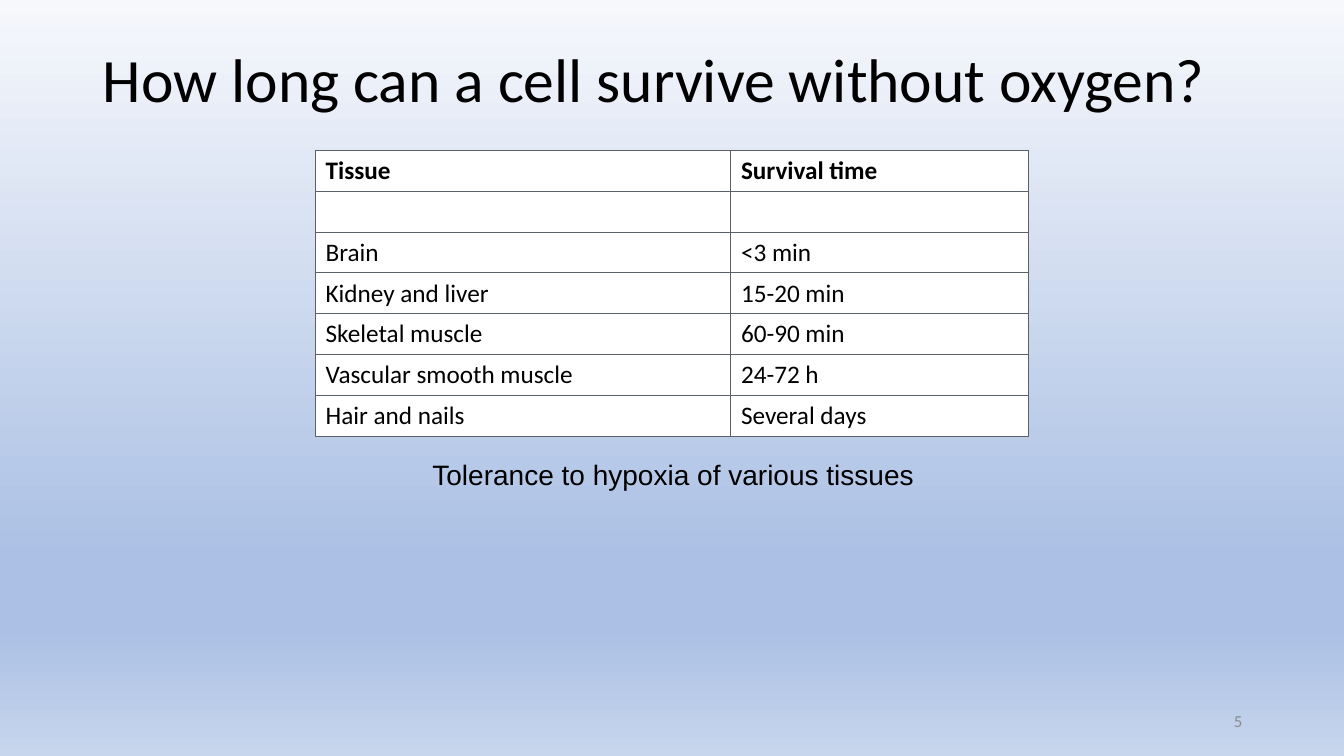
from dataclasses import dataclass

from lxml.etree import SubElement
from pptx import Presentation
from pptx.dml.color import RGBColor
from pptx.enum.text import MSO_ANCHOR as Anchor, MSO_AUTO_SIZE as AutoSize, PP_ALIGN as Align
from pptx.oxml.ns import qn
from pptx.slide import Slide
from pptx.table import _Cell as Cell
from pptx.text.text import TextFrame
from pptx.util import Inches, Pt

COLORS = {
    "text": "000000",
    "number": "8C8C8C",
    "cell": "FFFFFF",
    "border": "5B616B",
    "sky": "F6F8FC",
    "blue": "ABC0E4",
    "haze": "C7D5ED",
}
BACKGROUND_STOPS = [(0, "sky"), (74, "blue"), (83, "blue"), (100, "haze")]
COLUMN_WIDTHS = [4.12, 2.95]
ROW_HEIGHT = 0.406
BORDER_SIDES = ["a:lnL", "a:lnR", "a:lnT", "a:lnB"]


@dataclass
class TextStyle:
    size: float
    font: str = "Calibri"
    color: str = "text"
    bold: bool = False
    align: Align = Align.LEFT
    anchor: Anchor = Anchor.MIDDLE


@dataclass
class Label:
    text: str
    left: float
    top: float
    width: float
    height: float
    style: TextStyle


@dataclass
class TissueRow:
    tissue: str
    survival: str
    bold: bool = False


TITLE = Label("How long can a cell survive without oxygen?", 0.92, 0.4, 11.5, 0.83, TextStyle(44))
LABELS = [
    Label("Tolerance to hypoxia of various tissues", 4.19, 4.49, 5.23, 0.44,
          TextStyle(20, "Arial", anchor=Anchor.TOP)),
    Label("5", 9.42, 6.95, 3, 0.4, TextStyle(12, color="number", align=Align.RIGHT)),
]
TISSUE_ROWS = [
    TissueRow("Tissue", "Survival time", bold=True),
    TissueRow("", ""),
    TissueRow("Brain", "<3 min"),
    TissueRow("Kidney and liver", "15-20 min"),
    TissueRow("Skeletal muscle", "60-90 min"),
    TissueRow("Vascular smooth muscle", "24-72 h"),
    TissueRow("Hair and nails", "Several days"),
]


def write_text(text_frame: TextFrame, text: str, style: TextStyle) -> None:
    text_frame.text = text
    paragraph = text_frame.paragraphs[0]
    paragraph.alignment = style.align
    for font in [paragraph.font, *(run.font for run in paragraph.runs)]:
        font.size = Pt(style.size)
        font.name = style.font
        font.bold = style.bold
        font.color.rgb = RGBColor.from_string(COLORS[style.color])


def place_label(shape, label: Label) -> None:
    shape.left, shape.top = Inches(label.left), Inches(label.top)
    shape.width, shape.height = Inches(label.width), Inches(label.height)
    text_frame = shape.text_frame
    text_frame.word_wrap = True
    text_frame.auto_size = AutoSize.NONE
    text_frame.vertical_anchor = label.style.anchor
    write_text(text_frame, label.text, label.style)


def paint_background(slide: Slide) -> None:
    fill = slide.background.fill
    fill.gradient()
    fill.gradient_angle = 270
    stop_list = slide.element.find(".//" + qn("a:gsLst"))
    for stop in list(stop_list):
        stop_list.remove(stop)
    for percent, color in BACKGROUND_STOPS:
        stop = SubElement(stop_list, qn("a:gs"), pos=str(percent * 1000))
        SubElement(stop, qn("a:srgbClr"), val=COLORS[color])


def style_cell(cell: Cell) -> None:
    properties = cell._tc.get_or_add_tcPr()
    for side in BORDER_SIDES:
        line = SubElement(properties, qn(side), w=str(Pt(0.75)))
        solid = SubElement(line, qn("a:solidFill"))
        SubElement(solid, qn("a:srgbClr"), val=COLORS["border"])
    cell.fill.solid()
    cell.fill.fore_color.rgb = RGBColor.from_string(COLORS["cell"])
    cell.vertical_anchor = Anchor.MIDDLE


def add_tissue_table(slide: Slide) -> None:
    row_count = len(TISSUE_ROWS)
    table = slide.shapes.add_table(
        row_count, len(COLUMN_WIDTHS), Inches(3.13), Inches(1.49),
        Inches(sum(COLUMN_WIDTHS)), Inches(ROW_HEIGHT * row_count),
    ).table
    table.horz_banding = False
    for column, width in zip(table.columns, COLUMN_WIDTHS):
        column.width = Inches(width)
    for row, entry in zip(table.rows, TISSUE_ROWS):
        row.height = Inches(ROW_HEIGHT)
        for cell, text in zip(row.cells, [entry.tissue, entry.survival]):
            style_cell(cell)
            write_text(cell.text_frame, text, TextStyle(18, bold=entry.bold))


def main() -> None:
    presentation = Presentation()
    presentation.slide_width = Inches(13.33)
    presentation.slide_height = Inches(7.5)
    slide = presentation.slides.add_slide(presentation.slide_layouts[5])
    paint_background(slide)
    place_label(slide.shapes.title, TITLE)
    slide.shapes.title.text_frame.paragraphs[0].line_spacing = 0.9
    add_tissue_table(slide)
    for label in LABELS:
        place_label(slide.shapes.add_textbox(0, 0, 0, 0), label)
    presentation.save("out.pptx")


if __name__ == "__main__":
    main()
